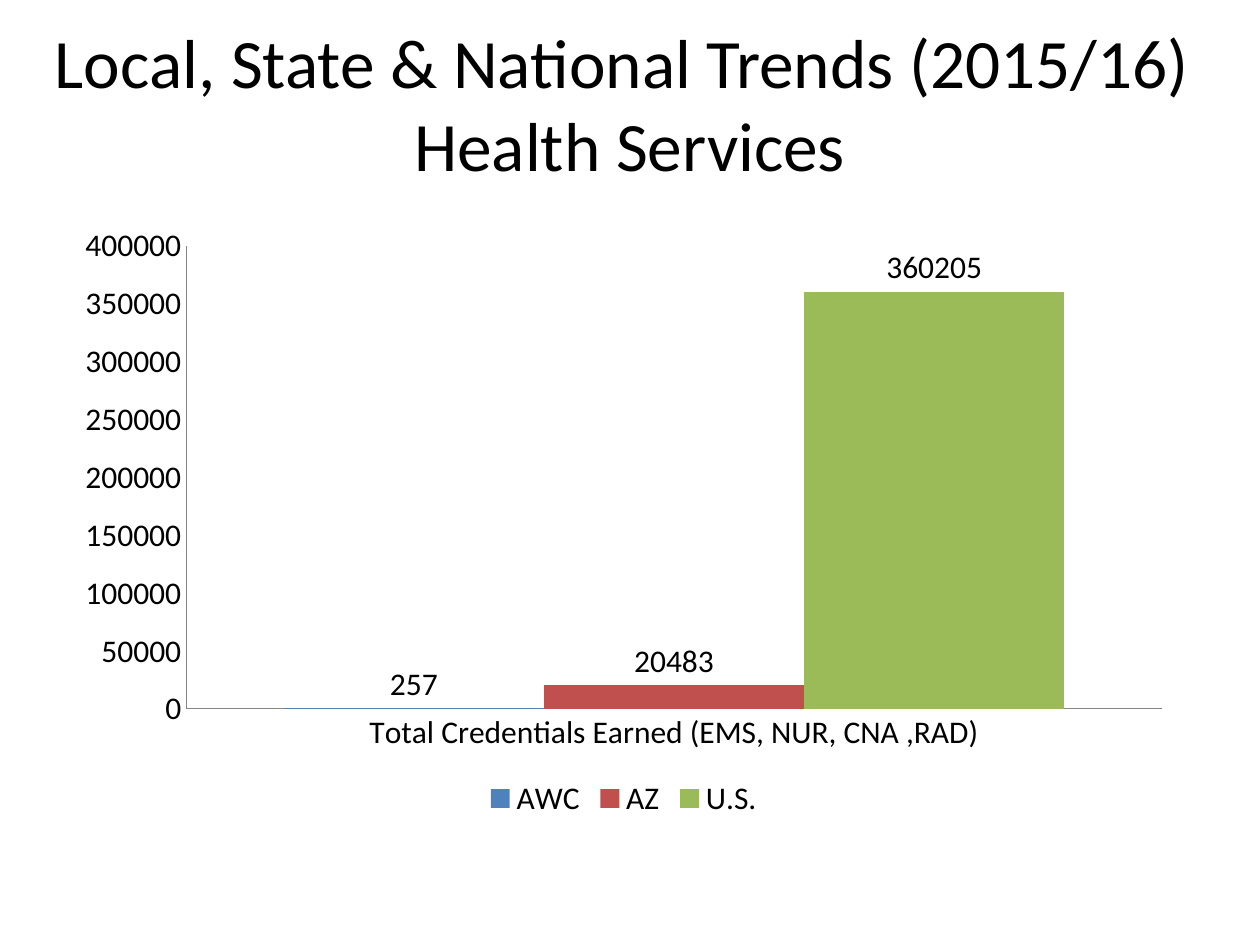
import pptx
import pptx.chart.data
import pptx.dml.color
import pptx.enum.chart
import pptx.enum.text
import pptx.util

RGBColor = pptx.dml.color.RGBColor
BLACK = RGBColor(0x00, 0x00, 0x00)
AXIS_GRAY = RGBColor(0x86, 0x86, 0x86)
BLUE = RGBColor(0x4F, 0x81, 0xBD)
RED = RGBColor(0xC0, 0x50, 0x4D)
GREEN = RGBColor(0x9B, 0xBB, 0x59)
FONT = "Calibri"
CATEGORY = "Total Credentials Earned (EMS, NUR, CNA ,RAD)"
CREDENTIALS = [("AWC", 257, BLUE), ("AZ", 20483, RED), ("U.S.", 360205, GREEN)]


def style_font(font, size):
    """Apply the slide's typeface and colour at the given size."""
    font.name = FONT
    font.size = pptx.util.Pt(size)
    font.color.rgb = BLACK


def add_title(slide, box):
    """Place the two-line centred title in the box."""
    frame = slide.shapes.add_textbox(*box).text_frame
    frame.word_wrap = True
    frame.vertical_anchor = pptx.enum.text.MSO_ANCHOR.MIDDLE
    para = frame.paragraphs[0]
    para.text = "Local, State & National Trends (2015/16) \vHealth Services"
    para.alignment = pptx.enum.text.PP_ALIGN.CENTER
    for span in para.runs:
        style_font(span.font, 39.6)


def style_axis(axis):
    """Give an axis a thin gray line without ticks or gridlines."""
    axis.has_major_gridlines = False
    axis.major_tick_mark = pptx.enum.chart.XL_TICK_MARK.NONE
    axis.minor_tick_mark = pptx.enum.chart.XL_TICK_MARK.NONE
    axis.format.line.color.rgb = AXIS_GRAY
    axis.format.line.width = pptx.util.Pt(0.75)


def add_credentials_chart(slide, box):
    """Place the clustered column chart of credentials in the box."""
    data = pptx.chart.data.CategoryChartData()
    data.categories = [CATEGORY]
    for name, total, color in CREDENTIALS:
        data.add_series(name, [total])
    kind = pptx.enum.chart.XL_CHART_TYPE.COLUMN_CLUSTERED
    chart = slide.shapes.add_chart(kind, *box, data).chart
    style_font(chart.font, 18)
    chart.has_title = False
    chart.has_legend = True
    chart.legend.position = pptx.enum.chart.XL_LEGEND_POSITION.BOTTOM
    chart.legend.include_in_layout = False
    style_axis(chart.category_axis)
    style_axis(chart.value_axis)
    chart.value_axis.minimum_scale = 0
    chart.value_axis.maximum_scale = 400000
    chart.value_axis.major_unit = 50000
    plot = chart.plots[0]
    plot.gap_width = 75
    plot.overlap = 0
    plot.vary_by_categories = False
    for series, (name, total, color) in zip(plot.series, CREDENTIALS):
        series.format.fill.solid()
        series.format.fill.fore_color.rgb = color
        labels = series.data_labels
        labels.show_value = True
        labels.number_format = "General"
        labels.number_format_is_linked = False
        labels.position = pptx.enum.chart.XL_LABEL_POSITION.OUTSIDE_END
        style_font(labels.font, 18)


def main():
    """Build the slide and save the deck."""
    deck = pptx.Presentation()
    deck.slide_width = pptx.util.Inches(10)
    deck.slide_height = pptx.util.Inches(7.5)
    slide = deck.slides.add_slide(deck.slide_layouts[6])

    def share(left, top, width, height):
        """Turn shares of the slide's size into a box."""
        return (int(deck.slide_width * left), int(deck.slide_height * top),
                int(deck.slide_width * width), int(deck.slide_height * height))

    add_title(slide, share(0, 0.025, 1, 0.167))
    add_credentials_chart(slide, share(0.05, 0.227, 0.89, 0.645))
    deck.save("out.pptx")


if __name__ == "__main__":
    main()
